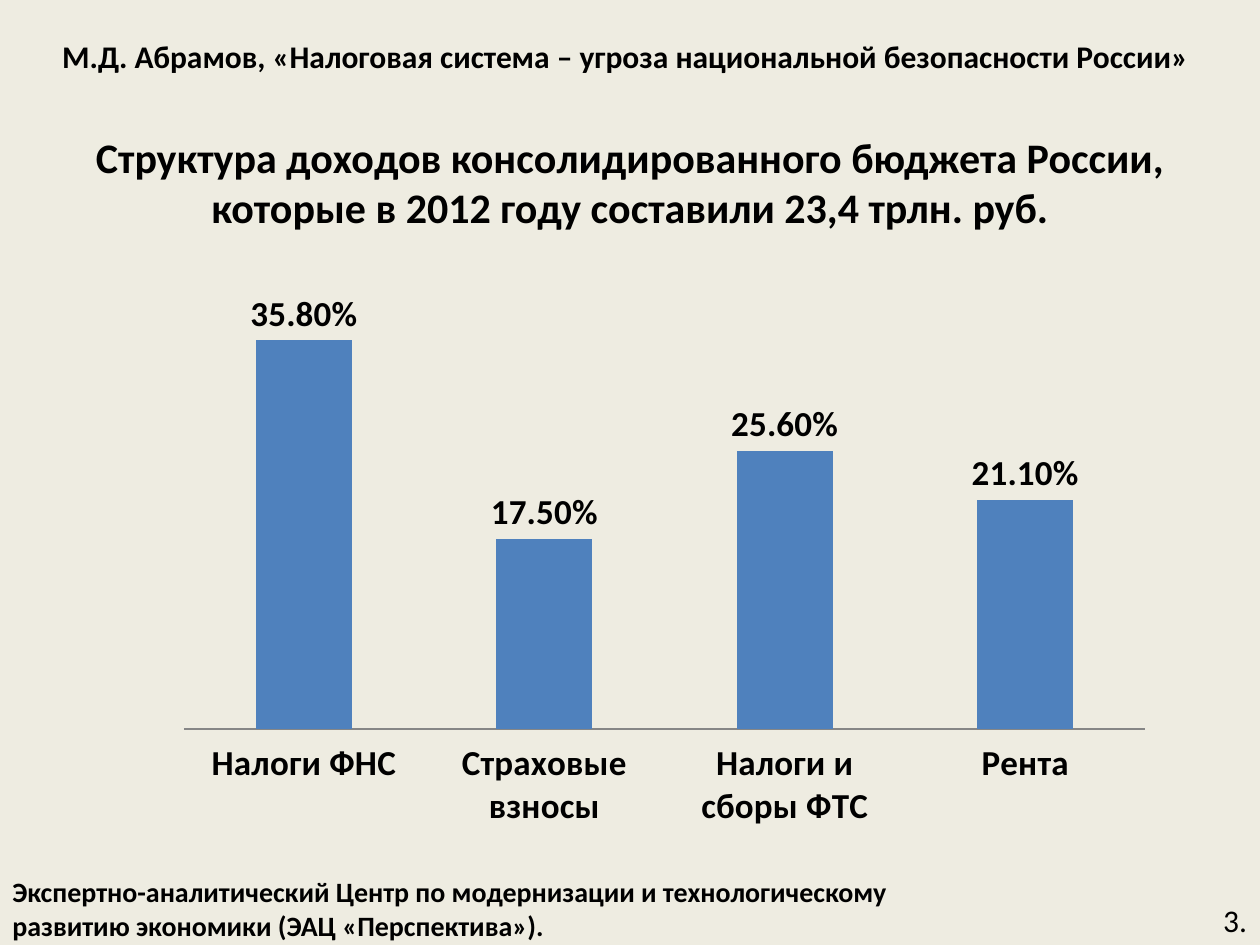
from pptx import Presentation
from pptx.chart.data import CategoryChartData
from pptx.dml.color import RGBColor
from pptx.enum.chart import XL_CHART_TYPE as ChartType, XL_LABEL_POSITION as LabelPosition
from pptx.enum.chart import XL_TICK_LABEL_POSITION as TickLabels, XL_TICK_MARK as TickMark
from pptx.enum.text import MSO_ANCHOR as Anchor, MSO_AUTO_SIZE as AutoSize, PP_ALIGN as Align
from pptx.oxml.xmlchemy import OxmlElement
from pptx.util import Inches, Pt

FONT = "Calibri"
BLACK = RGBColor(0x00, 0x00, 0x00)
BLUE = RGBColor(0x4F, 0x81, 0xBD)
GRAY = RGBColor(0x86, 0x86, 0x86)
CREAM = RGBColor(0xEE, 0xEC, 0xE1)

HEADER = "М.Д. Абрамов, «Налоговая система – угроза национальной безопасности России»"
HEADING = ("Структура доходов консолидированного бюджета России, "
           "которые в 2012 году составили 23,4 трлн. руб.")
FOOTER = ["Экспертно-аналитический Центр по модернизации и технологическому",
          "развитию экономики (ЭАЦ «Перспектива»)."]
PAGE_NUMBER = "3."
REVENUE = {"Налоги ФНС": 0.358, "Страховые взносы": 0.175,
           "Налоги и сборы ФТС": 0.256, "Рента": 0.211}


def style_font(font, size, bold):
    font.name, font.size, font.bold = FONT, Pt(size), bold
    font.color.rgb = BLACK


def place(box, left, top, width, height):
    box.left, box.top = Inches(left), Inches(top)
    box.width, box.height = Inches(width), Inches(height)


def write(box, lines, size, bold=True, align=Align.LEFT, anchor=Anchor.TOP, wrap=True):
    frame = box.text_frame
    frame.auto_size = AutoSize.NONE
    frame.word_wrap = wrap
    frame.vertical_anchor = anchor
    for index, line in enumerate(lines):
        para = frame.add_paragraph() if index else frame.paragraphs[0]
        para.alignment = align
        span = para.add_run()
        span.text = line
        style_font(span.font, size, bold)


def add_label(page, area, lines, size, **options):
    box = page.shapes.add_textbox(*(Inches(value) for value in area))
    write(box, lines, size, wrap=False, **options)


def add_revenue_chart(page):
    data = CategoryChartData(number_format="0.00%")
    data.categories = list(REVENUE)
    data.add_series("Series 1", list(REVENUE.values()))
    chart = page.shapes.add_chart(ChartType.COLUMN_CLUSTERED, Inches(1.3), Inches(2.25),
                                  Inches(7.95), Inches(4.41), data).chart
    chart.has_title = chart.has_legend = False
    style_font(chart.font, 10, False)

    plot = chart.plots[0]
    plot.vary_by_categories = False
    plot.gap_width, plot.overlap = 150, -25
    fill = plot.series[0].format.fill
    fill.solid()
    fill.fore_color.rgb = BLUE
    plot.has_data_labels = True
    labels = plot.data_labels
    labels.show_value = True
    labels.number_format, labels.number_format_is_linked = "0.00%", False
    labels.position = LabelPosition.OUTSIDE_END
    style_font(labels.font, 20, True)

    categories, values = chart.category_axis, chart.value_axis
    categories.major_tick_mark = TickMark.NONE
    categories.tick_label_position = TickLabels.LOW
    categories.format.line.color.rgb = GRAY
    style_font(categories.tick_labels.font, 20, True)
    values.minimum_scale, values.maximum_scale = 0, 0.4
    values.has_major_gridlines = False
    values.visible = False


def main():
    deck = Presentation()
    deck.slide_width, deck.slide_height = Inches(10), Inches(7.5)
    page = deck.slides.add_slide(deck.slide_layouts[1])
    page.background.fill.solid()
    page.background.fill.fore_color.rgb = CREAM

    title, body = page.shapes.title, page.placeholders[1]
    place(title, 0.12, 0.13, 9.69, 0.62)
    write(title, [HEADER], 18, align=Align.CENTER, anchor=Anchor.MIDDLE)
    place(body, 0.5, 0.99, 9, 5.71)
    write(body, [HEADING], 24, align=Align.CENTER)
    properties = body.text_frame.paragraphs[0]._p.get_or_add_pPr()
    properties.set("marL", "0")
    properties.set("indent", "0")
    properties.append(OxmlElement("a:buNone"))

    add_revenue_chart(page)
    add_label(page, (0, 6.89, 7.27, 0.64), FOOTER, 16, anchor=Anchor.MIDDLE)
    add_label(page, (9.61, 7.1, 0.39, 0.4), [PAGE_NUMBER], 18, bold=False)
    deck.save("out.pptx")


if __name__ == "__main__":
    main()
